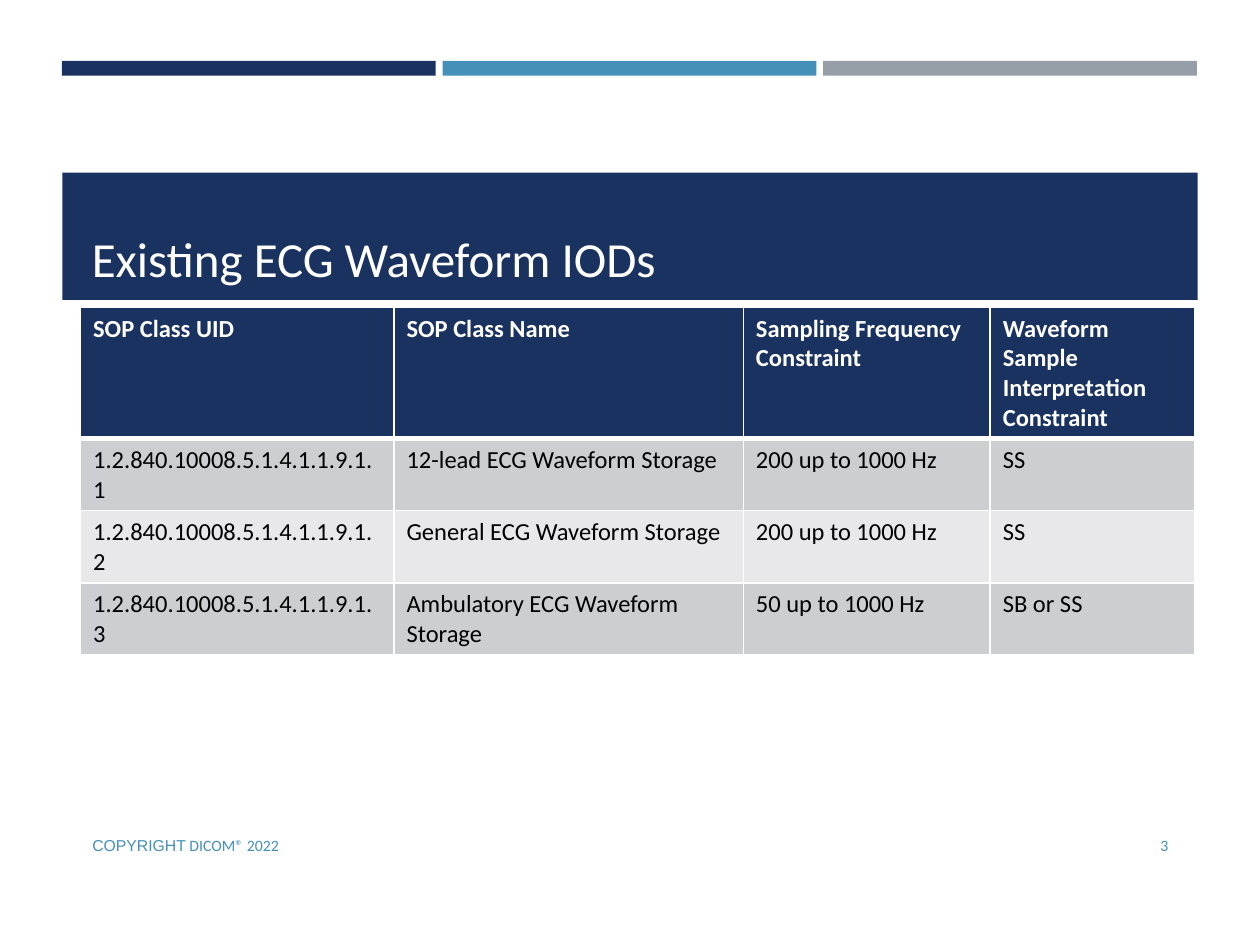
"""Build a slide with a table of existing ECG waveform IODs."""
from dataclasses import dataclass

from lxml import etree
from pptx import Presentation
from pptx import util as u
from pptx.dml.color import RGBColor
from pptx.enum import shapes, text
from pptx.oxml.ns import qn

COLORS = {
    "navy": "1A3260", "blue": "4590B8", "gray": "969FA7", "white": "FFFFFF",
    "black": "000000", "band_dark": "CDCED2", "band_light": "E8E8EA",
}
ROWS = [
    ("SOP Class UID", "SOP Class Name", "Sampling Frequency Constraint",
     "Waveform Sample Interpretation Constraint"),
    ("1.2.840.10008.5.1.4.1.1.9.1.1", "12-lead ECG Waveform Storage", "200 up to 1000 Hz", "SS"),
    ("1.2.840.10008.5.1.4.1.1.9.1.2", "General ECG Waveform Storage", "200 up to 1000 Hz", "SS"),
    ("1.2.840.10008.5.1.4.1.1.9.1.3", "Ambulatory ECG Waveform Storage", "50 up to 1000 Hz", "SB or SS"),
]
COL_WIDTHS = (179.1, 199.7, 141.1, 116.6)
ROW_HEIGHTS = (75, 41.2, 41.2, 41.2)


@dataclass(frozen=True)
class Box:
    left: float
    top: float
    width: float
    height: float

    def emu(self) -> tuple:
        return tuple(u.Pt(v) for v in (self.left, self.top, self.width, self.height))


@dataclass(frozen=True)
class Bar:
    box: Box
    color: str


BAR_WIDTH, BAR_GAP = 213.6, 3.9
BARS = [
    Bar(Box(35.4 + i * (BAR_WIDTH + BAR_GAP), 34.8, BAR_WIDTH, 8.4), color)
    for i, color in enumerate(("navy", "blue", "gray"))
] + [Bar(Box(35.7, 98.7, 648.7, 72.7), "navy")]


def rgb(name: str) -> RGBColor:
    return RGBColor.from_string(COLORS[name])


def add_run(p, content: str, *, size: float, color: str, font: str = "Calibri", bold: bool = False) -> None:
    r = p.add_run()
    r.text = content
    r.font.size, r.font.name, r.font.bold = u.Pt(size), font, bold
    r.font.color.rgb = rgb(color)


def add_bar(slide, bar: Bar) -> None:
    sp = slide.shapes.add_shape(shapes.MSO_SHAPE.RECTANGLE, *bar.box.emu())
    sp.shadow.inherit = False
    sp.fill.solid()
    sp.fill.fore_color.rgb = rgb(bar.color)
    sp.line.fill.background()


def add_text(slide, box: Box, runs: list, *, anchor=text.MSO_ANCHOR.MIDDLE,
             align=text.PP_ALIGN.LEFT, size: float = 9, color: str = "blue") -> None:
    tf = slide.shapes.add_textbox(*box.emu()).text_frame
    tf.word_wrap = True
    tf.vertical_anchor = anchor
    p = tf.paragraphs[0]
    p.alignment = align
    for content, font in runs:
        add_run(p, content, size=size, color=color, font=font)


def set_borders(cell, **widths: float) -> None:
    tc_pr = cell._tc.get_or_add_tcPr()
    for side in "LRTB":
        ln = etree.SubElement(tc_pr, qn(f"a:ln{side}"), w=str(u.Pt(widths.get(side, 1))))
        fill = etree.SubElement(ln, qn("a:solidFill"))
        etree.SubElement(fill, qn("a:srgbClr"), val=COLORS["white"])


def add_iod_table(slide, left: float, top: float) -> None:
    box = Box(left, top, sum(COL_WIDTHS), sum(ROW_HEIGHTS))
    table = slide.shapes.add_table(len(ROWS), len(COL_WIDTHS), *box.emu()).table
    for col, width in zip(table.columns, COL_WIDTHS):
        col.width = u.Pt(width)
    for i, (row, values) in enumerate(zip(table.rows, ROWS)):
        row.height = u.Pt(ROW_HEIGHTS[i])
        header = i == 0
        fill = "navy" if header else "band_dark" if i % 2 else "band_light"
        for cell, value in zip(row.cells, values):
            set_borders(cell, T=3 if i == 1 else 1, B=3 if header else 1)
            cell.fill.solid()
            cell.fill.fore_color.rgb = rgb(fill)
            add_run(cell.text_frame.paragraphs[0], value, size=14,
                    color="white" if header else "black", bold=header)


def main() -> None:
    prs = Presentation()
    prs.slide_width, prs.slide_height = u.Pt(720), u.Pt(540)
    slide = prs.slides.add_slide(prs.slide_layouts[6])
    for bar in BARS:
        add_bar(slide, bar)
    add_text(slide, Box(45.4, 102.2, 629.3, 65.5), [("Existing ECG Waveform IODs", "Calibri")],
             anchor=text.MSO_ANCHOR.BOTTOM, size=28, color="white")
    add_iod_table(slide, 46, 175.7)
    add_text(slide, Box(45.7, 468.7, 383.8, 28.8), [("COPYRIGHT", "Arial"), (" DICOM® 2022", "Calibri")])
    add_text(slide, Box(614.2, 468.7, 60.5, 28.8), [("3", "Calibri")], align=text.PP_ALIGN.RIGHT)
    prs.save("out.pptx")


if __name__ == "__main__":
    main()
